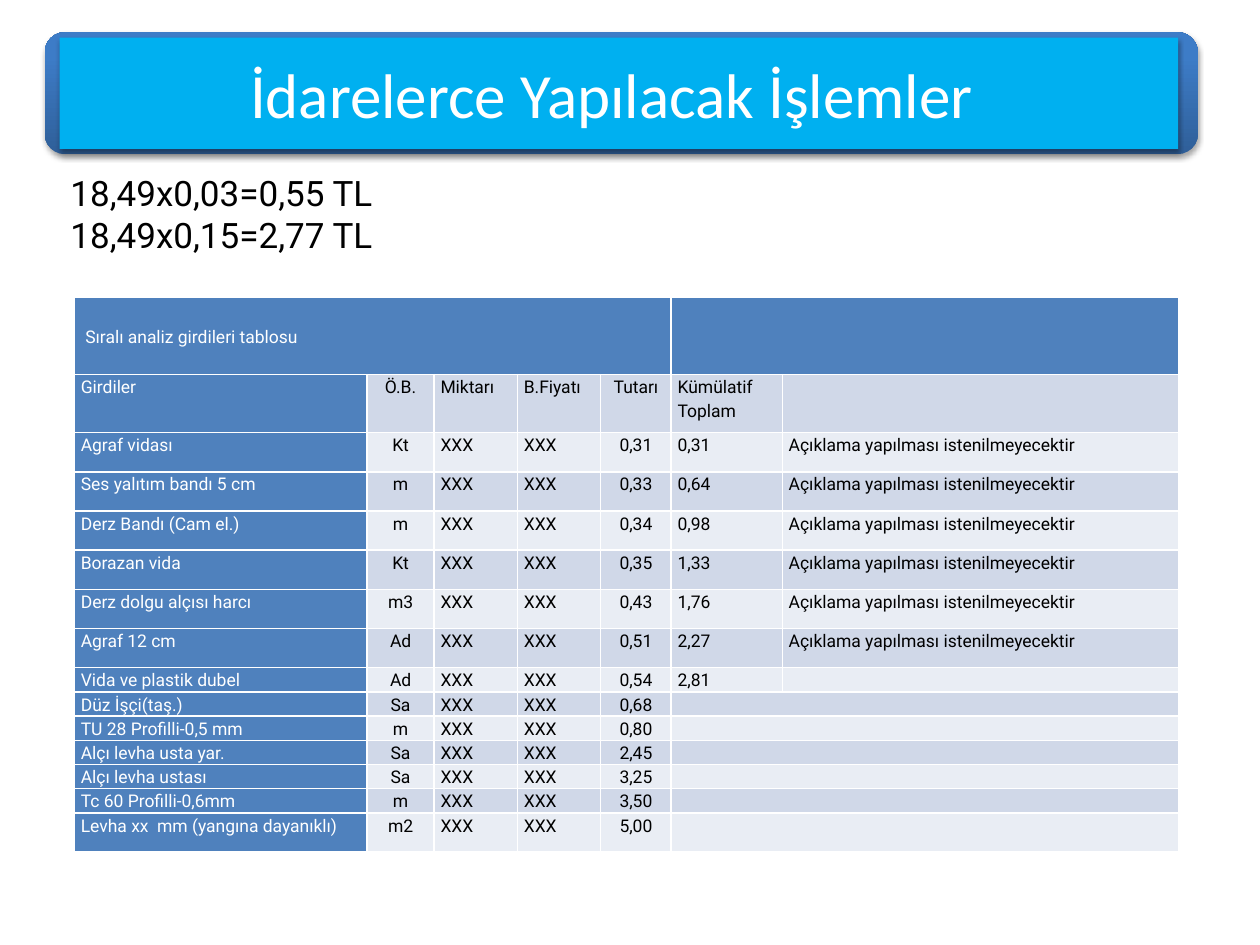
from lxml.etree import SubElement
from pptx import Presentation
from pptx.dml.color import RGBColor
from pptx.enum.shapes import MSO_SHAPE
from pptx.enum.text import MSO_ANCHOR, MSO_AUTO_SIZE, PP_ALIGN
from pptx.oxml.ns import qn
from pptx.util import Cm, Pt

WHITE = RGBColor(0xFF, 0xFF, 0xFF)
BLACK = RGBColor(0x00, 0x00, 0x00)
SKY_BLUE = RGBColor(0x00, 0xB0, 0xF0)
BAND_DARK = RGBColor(0x2F, 0x5F, 0x99)
BAND_LIGHT = RGBColor(0x3D, 0x7C, 0xC7)
HEADER_BLUE = RGBColor(0x4F, 0x81, 0xBD)
ROW_DARK = RGBColor(0xD0, 0xD8, 0xE8)
ROW_LIGHT = RGBColor(0xE9, 0xED, 0xF4)


def add_soft_shadow(shape):
    shape.shadow.inherit = False
    effects = shape._element.spPr.find(qn("a:effectLst"))
    shadow = SubElement(effects, qn("a:outerShdw"), blurRad=str(Pt(3.1)),
                        dist=str(Pt(1.8)), dir="5400000", rotWithShape="0")
    color = SubElement(shadow, qn("a:srgbClr"), val=str(BLACK))
    SubElement(color, qn("a:alpha"), val="35000")


def set_white_borders(cell):
    properties = cell._tc.get_or_add_tcPr()
    for position, side in enumerate(("a:lnL", "a:lnR", "a:lnT", "a:lnB")):
        line = properties.makeelement(qn(side), {"w": str(Pt(1))})
        fill = SubElement(line, qn("a:solidFill"))
        SubElement(fill, qn("a:srgbClr"), val=str(WHITE))
        properties.insert(position, line)


presentation = Presentation()
presentation.slide_width = Cm(25.4)
presentation.slide_height = Cm(19.05)
slide = presentation.slides.add_slide(presentation.slide_layouts[5])

# Rounded band behind the title
band = slide.shapes.add_shape(MSO_SHAPE.ROUNDED_RECTANGLE,
                              Cm(0.9), Cm(0.65), Cm(23.25), Cm(2.46))
band.fill.gradient()
band.fill.gradient_angle = 90
for stop, color, position in zip(band.fill.gradient_stops,
                                 (BAND_DARK, BAND_LIGHT), (0, 0.8)):
    stop.color.rgb = color
    stop.position = position
band.line.fill.background()
add_soft_shadow(band)

# Title, brought in front of the band
title = slide.shapes.title
band._element.addnext(title._element)
title_place = {"left": Cm(1.2), "top": Cm(0.76), "width": Cm(22.55), "height": Cm(2.24)}
for name, value in title_place.items():
    setattr(title, name, value)
title.fill.solid()
title.fill.fore_color.rgb = SKY_BLUE
title.line.fill.background()
add_soft_shadow(title)
title.text_frame.text = "İdarelerce Yapılacak İşlemler "
title.text_frame.auto_size = MSO_AUTO_SIZE.NONE
title.text_frame.vertical_anchor = MSO_ANCHOR.MIDDLE
paragraph = title.text_frame.paragraphs[0]
paragraph.alignment = PP_ALIGN.CENTER
for name, value in {"size": Pt(36), "name": "Calibri"}.items():
    setattr(paragraph.runs[0].font, name, value)
paragraph.runs[0].font.color.rgb = WHITE

# Calculations
calculations = slide.shapes.add_textbox(Cm(1.17), Cm(3.33), Cm(24.4), Cm(1.96))
calculations.text_frame.word_wrap = True
calculations.text_frame.text = "18,49x0,03=0,55 TL\n18,49x0,15=2,77 TL"
for paragraph in calculations.text_frame.paragraphs:
    for name, value in {"size": Pt(20), "name": "Roboto"}.items():
        setattr(paragraph.runs[0].font, name, value)
    paragraph.runs[0].font.color.rgb = BLACK

# Table contents: input, unit, amount, cumulative total
NOTE = "Açıklama yapılması istenilmeyecektir"
inputs = [
    ("Agraf vidası", "Kt", "0,31", "0,31"),
    ("Ses yalıtım bandı 5 cm", "m", "0,33", "0,64"),
    ("Derz Bandı (Cam el.)", "m", "0,34", "0,98"),
    ("Borazan vida", "Kt", "0,35", "1,33"),
    ("Derz dolgu alçısı harcı", "m3", "0,43", "1,76"),
    ("Agraf 12 cm", "Ad", "0,51", "2,27"),
    ("Vida ve plastik dubel", "Ad", "0,54", "2,81"),
    ("Düz İşçi(taş.)", "Sa", "0,68", ""),
    ("TU 28 Profilli-0,5 mm", "m", "0,80", ""),
    ("Alçı levha usta yar.", "Sa", "2,45", ""),
    ("Alçı levha ustası", "Sa", "3,25", ""),
    ("Tc 60 Profilli-0,6mm", "m", "3,50", ""),
    ("Levha xx  mm (yangına dayanıklı)", "m2", "5,00", ""),
]
NOTED_INPUTS = 6
rows = [
    ("Sıralı analiz girdileri tablosu", "", "", "", "", "", ""),
    ("Girdiler", "Ö.B.", "Miktarı", "B.Fiyatı", "Tutarı", "Kümülatif Toplam", ""),
]
for index, (item, unit, amount, total) in enumerate(inputs):
    note = NOTE if index < NOTED_INPUTS else ""
    rows.append((item, unit, "XXX", "XXX", amount, total, note))

column_widths = [5.9, 1.35, 1.68, 1.68, 1.42, 2.24, 8]
row_heights = [1.55, 1.17] + [0.79] * 6 + [0.48] * 6 + [0.79]
alignments = [PP_ALIGN.JUSTIFY, PP_ALIGN.CENTER, PP_ALIGN.LEFT, PP_ALIGN.LEFT,
              PP_ALIGN.CENTER, PP_ALIGN.JUSTIFY, PP_ALIGN.LEFT]
cell_margins = {"margin_left": Cm(0.13), "margin_right": Cm(0.13),
                "margin_top": 0, "margin_bottom": 0}

# Table
table = slide.shapes.add_table(len(rows), len(column_widths), Cm(1.5), Cm(6),
                               Cm(sum(column_widths)), Cm(sum(row_heights))).table
for column, width in zip(table.columns, column_widths):
    column.width = Cm(width)
for row, height in zip(table.rows, row_heights):
    row.height = Cm(height)

for row_index, texts in enumerate(rows):
    for column_index, text in enumerate(texts):
        cell = table.cell(row_index, column_index)
        is_header = row_index == 0 or column_index == 0
        for name, value in cell_margins.items():
            setattr(cell, name, value)
        cell.fill.solid()
        stripe = ROW_DARK if row_index % 2 else ROW_LIGHT
        cell.fill.fore_color.rgb = HEADER_BLUE if is_header else stripe
        set_white_borders(cell)
        paragraph = cell.text_frame.paragraphs[0]
        paragraph.alignment = alignments[column_index]
        paragraph.line_spacing = 1.15
        if text:
            run = paragraph.add_run()
            run.text = text
            for name, value in {"size": Pt(10), "name": "Roboto", "bold": False}.items():
                setattr(run.font, name, value)
            run.font.color.rgb = WHITE if is_header else BLACK
        else:
            # Keeps empty cells from stretching the low rows
            SubElement(paragraph._p, qn("a:endParaRPr"), sz="1000")

# Merged cells
heading = table.cell(0, 0)
heading.merge(table.cell(0, 4))
heading.vertical_anchor = MSO_ANCHOR.MIDDLE
heading.margin_left = Cm(0.22)
heading.text_frame.paragraphs[0].alignment = PP_ALIGN.LEFT
for row_index in [0, *range(9, len(rows))]:
    table.cell(row_index, 5).merge(table.cell(row_index, 6))

presentation.save("out.pptx")
